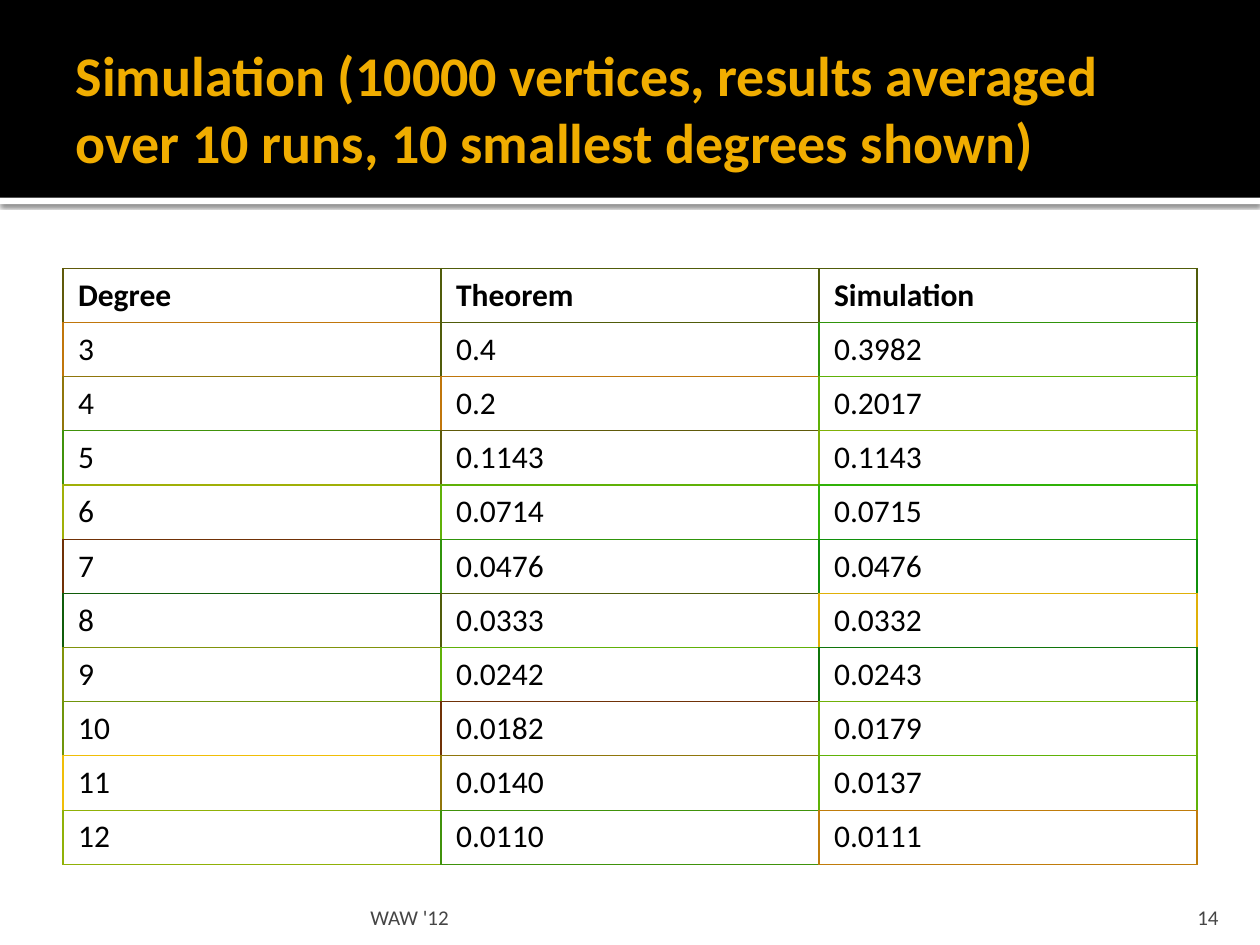
from dataclasses import dataclass
from typing import Any

from lxml.etree import SubElement
from pptx import Presentation
from pptx.dml.color import RGBColor
from pptx.enum.shapes import MSO_SHAPE
from pptx.enum.text import MSO_ANCHOR, MSO_AUTO_SIZE, PP_ALIGN
from pptx.oxml.ns import qn
from pptx.util import Emu, Inches, Pt

SLIDE_WIDTH, SLIDE_HEIGHT = Inches(10), Inches(7.5)
FONT = "Calibri"
BLACK, WHITE, GOLD, GREY = "000000", "FFFFFF", "F0AD00", "454545"
ROW_HEIGHT = Inches(0.43)
BORDER_WIDTH = Pt(0.75)


@dataclass(frozen=True)
class Box:
    """A rectangle in shares of the slide's width and height."""
    left: float
    top: float
    width: float
    height: float

    def lengths(self) -> tuple[Emu, Emu, Emu, Emu]:
        return (Emu(round(self.left * SLIDE_WIDTH)), Emu(round(self.top * SLIDE_HEIGHT)),
                Emu(round(self.width * SLIDE_WIDTH)), Emu(round(self.height * SLIDE_HEIGHT)))


@dataclass(frozen=True)
class TextStyle:
    size: float
    color: str
    bold: bool = False
    align: Any = PP_ALIGN.LEFT


@dataclass(frozen=True)
class FooterText:
    text: str
    box: Box
    side_margin: float
    style: TextStyle


@dataclass(frozen=True)
class ResultRow:
    texts: tuple[str, str, str]
    borders: tuple[str, str, str]


TITLE = "Simulation (10000 vertices, results averaged over 10 runs, 10 smallest degrees shown)"
TITLE_BOX = Box(0.05, 0.0227, 0.9, 0.1827)
HEADER_BAND = Box(0, 0, 1, 0.2093)
WHITE_STRIP = Box(0, 0.2093, 1, 0.0067)
TABLE_BOX = Box(0.05, 0.284, 0.9, 0.63)

ROWS = [
    ResultRow(("Degree", "Theorem", "Simulation"), ("605A0A", "505C0A", "505C0A")),
    ResultRow(("3", "0.4", "0.3982"), ("C0760B", "505C0A", "30940B")),
    ResultRow(("4", "0.2", "0.2017"), ("90760B", "C0760B", "60B108")),
    ResultRow(("5", "0.1143", "0.1143"), ("40920B", "605A0A", "80B108")),
    ResultRow(("6", "0.0714", "0.0715"), ("A0B008", "60B108", "30B108")),
    ResultRow(("7", "0.0476", "0.0476"), ("703107", "30940B", "10900B")),
    ResultRow(("8", "0.0333", "0.0332"), ("105C0A", "505C0A", "E0B008")),
    ResultRow(("9", "0.0242", "0.0243"), ("80930B", "60B108", "10750B")),
    ResultRow(("10", "0.0182", "0.0179"), ("70950B", "703107", "70B108")),
    ResultRow(("11", "0.0140", "0.0137"), ("F0BE08", "90760B", "60B208")),
    ResultRow(("12", "0.0110", "0.0111"), ("90B108", "40920B", "C07C0B")),
]

FOOTERS = [
    FooterText("WAW '12", Box(0.289, 0.944, 0.602, 0.04), 0.05, TextStyle(12, GREY)),
    FooterText("14", Box(0.897, 0.944, 0.08, 0.04), 0.1,
               TextStyle(12, GREY, align=PP_ALIGN.RIGHT)),
]


def rgb(color: str) -> RGBColor:
    return RGBColor.from_string(color)


def set_values(target: Any, values: dict[str, Any]) -> None:
    for name, value in values.items():
        setattr(target, name, value)


def write_text(frame: Any, text: str, style: TextStyle) -> None:
    frame.text = text
    paragraph = frame.paragraphs[0]
    paragraph.alignment = style.align
    font = paragraph.runs[0].font
    set_values(font, {"name": FONT, "size": Pt(style.size), "bold": style.bold})
    font.color.rgb = rgb(style.color)


def add_band(slide: Any, box: Box, color: str) -> Any:
    shape = slide.shapes.add_shape(MSO_SHAPE.RECTANGLE, *box.lengths())
    shape.shadow.inherit = False
    shape.fill.solid()
    shape.fill.fore_color.rgb = rgb(color)
    shape.line.fill.background()
    return shape


def add_shadow(shape: Any) -> None:
    effects = shape._element.spPr.find(qn("a:effectLst"))
    shadow = SubElement(effects, qn("a:outerShdw"), blurRad=str(Pt(2.5)), dist=str(Pt(0.8)),
                        dir="5400000", algn="t", rotWithShape="0")
    color = SubElement(shadow, qn("a:srgbClr"), val=BLACK)
    SubElement(color, qn("a:alpha"), val="60000")


def place_title(slide: Any) -> None:
    title = slide.shapes.title
    set_values(title, dict(zip(("left", "top", "width", "height"), TITLE_BOX.lengths())))
    set_values(title.text_frame, {
        "margin_left": Inches(0.1), "margin_right": Inches(0.05),
        "margin_top": Inches(0.05), "margin_bottom": Inches(0.05),
        "vertical_anchor": MSO_ANCHOR.MIDDLE, "word_wrap": True,
        "auto_size": MSO_AUTO_SIZE.NONE})
    write_text(title.text_frame, TITLE, TextStyle(32, GOLD, bold=True))
    # The title stands in front of the header band
    title._element.getparent().append(title._element)


def set_borders(cell: Any, colors: dict[str, str]) -> None:
    properties = cell._tc.get_or_add_tcPr()
    for index, (side, color) in enumerate(colors.items()):
        line = SubElement(properties, qn(f"a:{side}"), w=str(BORDER_WIDTH))
        fill = SubElement(line, qn("a:solidFill"))
        SubElement(fill, qn("a:srgbClr"), val=color)
        properties.insert(index, line)  # borders come before the fill


def border_colors(row: int, column: int) -> dict[str, str]:
    """A cell's own colour is left and above; its neighbours' are right and below."""
    own = ROWS[row].borders
    right = own[min(column + 1, len(own) - 1)]
    below = ROWS[min(row + 1, len(ROWS) - 1)].borders[column]
    return {"lnL": own[column], "lnR": right, "lnT": own[column], "lnB": below}


def add_results_table(slide: Any) -> None:
    column_count = len(ROWS[0].texts)
    table = slide.shapes.add_table(len(ROWS), column_count, *TABLE_BOX.lengths()).table
    table.horz_banding = False
    for row_index, row in enumerate(ROWS):
        table.rows[row_index].height = ROW_HEIGHT
        style = TextStyle(18, BLACK, bold=row_index == 0)
        for column_index, text in enumerate(row.texts):
            cell = table.cell(row_index, column_index)
            set_values(cell, {
                "margin_left": Inches(0.12), "margin_right": Inches(0.12),
                "margin_top": Inches(0.06), "margin_bottom": Inches(0.06),
                "vertical_anchor": MSO_ANCHOR.MIDDLE})
            write_text(cell.text_frame, text, style)
            cell.fill.solid()
            cell.fill.fore_color.rgb = rgb(WHITE)
            set_borders(cell, border_colors(row_index, column_index))


def add_footer(slide: Any, footer: FooterText) -> None:
    frame = slide.shapes.add_textbox(*footer.box.lengths()).text_frame
    set_values(frame, {
        "margin_left": Inches(footer.side_margin), "margin_right": Inches(footer.side_margin),
        "margin_top": Inches(0.05), "margin_bottom": 0,
        "vertical_anchor": MSO_ANCHOR.BOTTOM, "word_wrap": True})
    write_text(frame, footer.text, footer.style)


def main() -> None:
    presentation = Presentation()
    set_values(presentation, {"slide_width": SLIDE_WIDTH, "slide_height": SLIDE_HEIGHT})
    slide = presentation.slides.add_slide(presentation.slide_layouts.get_by_name("Title Only"))

    # Header
    add_shadow(add_band(slide, WHITE_STRIP, WHITE))
    add_band(slide, HEADER_BAND, BLACK)
    place_title(slide)

    # Results and footer
    add_results_table(slide)
    for footer in FOOTERS:
        add_footer(slide, footer)

    presentation.save("out.pptx")


if __name__ == "__main__":
    main()
